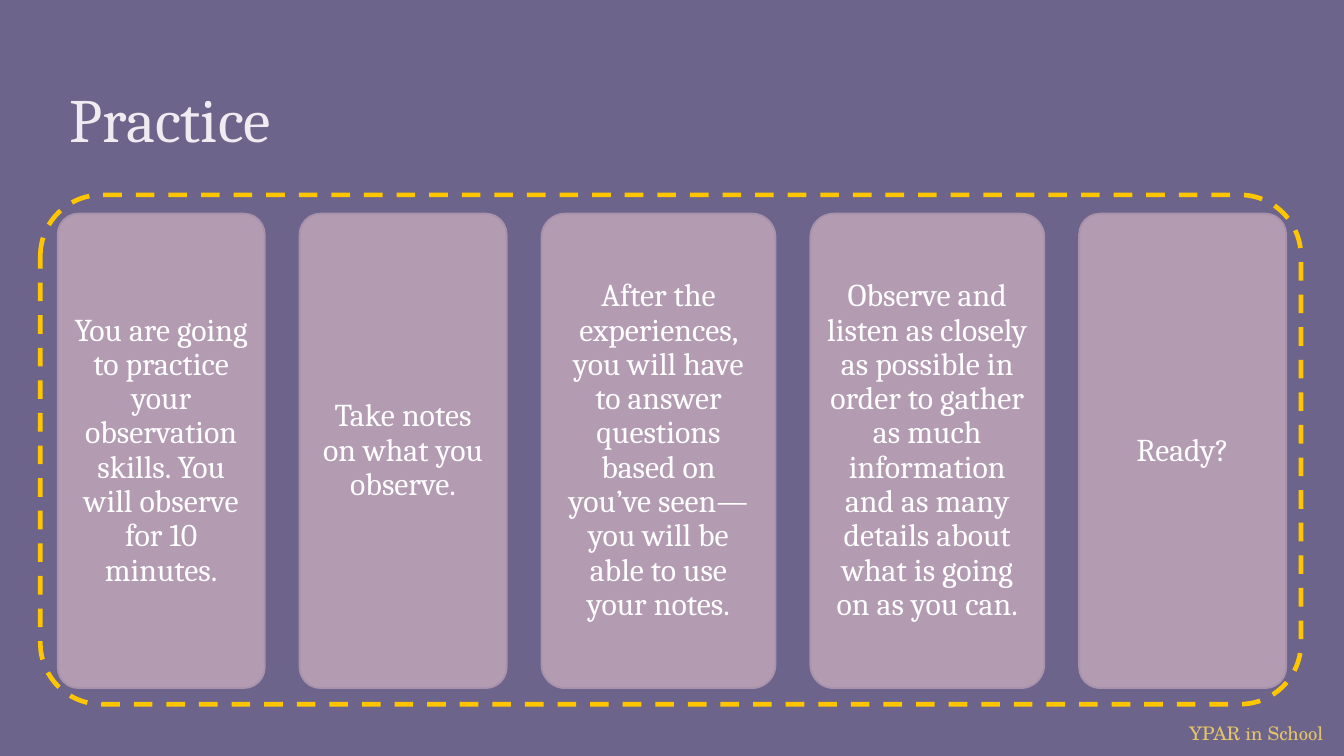
"""Build the Practice slide: five instruction cards inside a dashed frame."""
from lxml import etree
from pptx import Presentation, util as u
from pptx.dml.color import RGBColor
from pptx.enum import dml, shapes, text
from pptx.oxml.ns import qn

BACK = RGBColor(0x6C, 0x64, 0x8B)
PALE = RGBColor(0xF0, 0xEB, 0xF0)
CARD = RGBColor(0xB6, 0x9E, 0xB4)
EDGE = RGBColor(0xA8, 0x92, 0xAC)
WHITE = RGBColor(0xFF, 0xFF, 0xFF)
GOLD = RGBColor(0xFF, 0xC6, 0x00)
SAND = RGBColor(0xE4, 0xC4, 0x69)

TITLE = "Practice"
MARK = "YPAR in School"
CARDS = [
    (1.54, "You are going to practice your observation skills. You will observe for 10 minutes."),
    (1.54, "Take notes on what you observe."),
    (1.74, "After the experiences, you will have to answer questions based on "
           "you’ve seen—you will be able to use your notes."),
    (1.74, "Observe and listen as closely as possible in order to gather as much "
           "information and as many details about what is going on as you can."),
    (1.54, "Ready?"),
]
LEFT, TOP, HIGH, GAP = 0.43, 1.59, 3.53, 0.26


def write(shape, words, size, color, font="Cambria", align=text.PP_ALIGN.LEFT,
          anchor=text.MSO_ANCHOR.MIDDLE, inset=0.1, space=1.0, wrap=True):
    frame = shape.text_frame
    frame.auto_size = text.MSO_AUTO_SIZE.NONE
    frame.word_wrap = wrap
    frame.vertical_anchor = anchor
    frame.margin_left = frame.margin_right = u.Inches(inset)
    frame.margin_top = frame.margin_bottom = u.Inches(inset)
    para = frame.paragraphs[0]
    para.alignment, para.line_spacing = align, space
    run = para.add_run()
    run.text = words
    run.font.name, run.font.size = font, u.Pt(size)
    run.font.color.rgb = color


def panel(slide, box, bend, line, width):
    shape = slide.shapes.add_shape(shapes.MSO_SHAPE.ROUNDED_RECTANGLE, *map(u.Inches, box))
    shape.adjustments[0] = bend
    shape.shadow.inherit = False
    shape.line.color.rgb, shape.line.width = line, u.Pt(width)
    return shape


def main():
    deck = Presentation()
    deck.slide_width = u.Inches(10)
    deck.slide_height = deck.slide_width * 9 // 16
    slide = deck.slides.add_slide(deck.slide_layouts[5])
    slide.background.fill.solid()
    slide.background.fill.fore_color.rgb = BACK

    title = slide.shapes.title
    title.left, title.top, title.width, title.height = map(u.Inches, (0.42, 0.5, 9.15, 0.75))
    write(title, TITLE, 33, PALE, anchor=text.MSO_ANCHOR.BOTTOM)

    mark = slide.shapes.add_textbox(*map(u.Inches, (8.75, 5.32, 1.2, 0.27)))
    write(mark, MARK, 10, SAND, font="TeX Gyre Schola", wrap=False)

    left = LEFT
    for wide, words in CARDS:
        card = panel(slide, (left, TOP, wide, HIGH), 0.1, EDGE, 1)
        card.fill.solid()
        card.fill.fore_color.rgb = CARD
        tint = card.fill._xPr.find(qn("a:solidFill"))[0]
        etree.SubElement(tint, qn("a:alpha"), val="96000")
        write(card, words, 17, WHITE, align=text.PP_ALIGN.CENTER, inset=0.07, space=0.9)
        left += wide + GAP

    frame = panel(slide, (0.3, 1.45, 9.38, 3.79), 0.12, GOLD, 2.5)
    frame.fill.background()
    frame.line.dash_style = dml.MSO_LINE.DASH
    deck.save("out.pptx")


if __name__ == "__main__":
    main()
